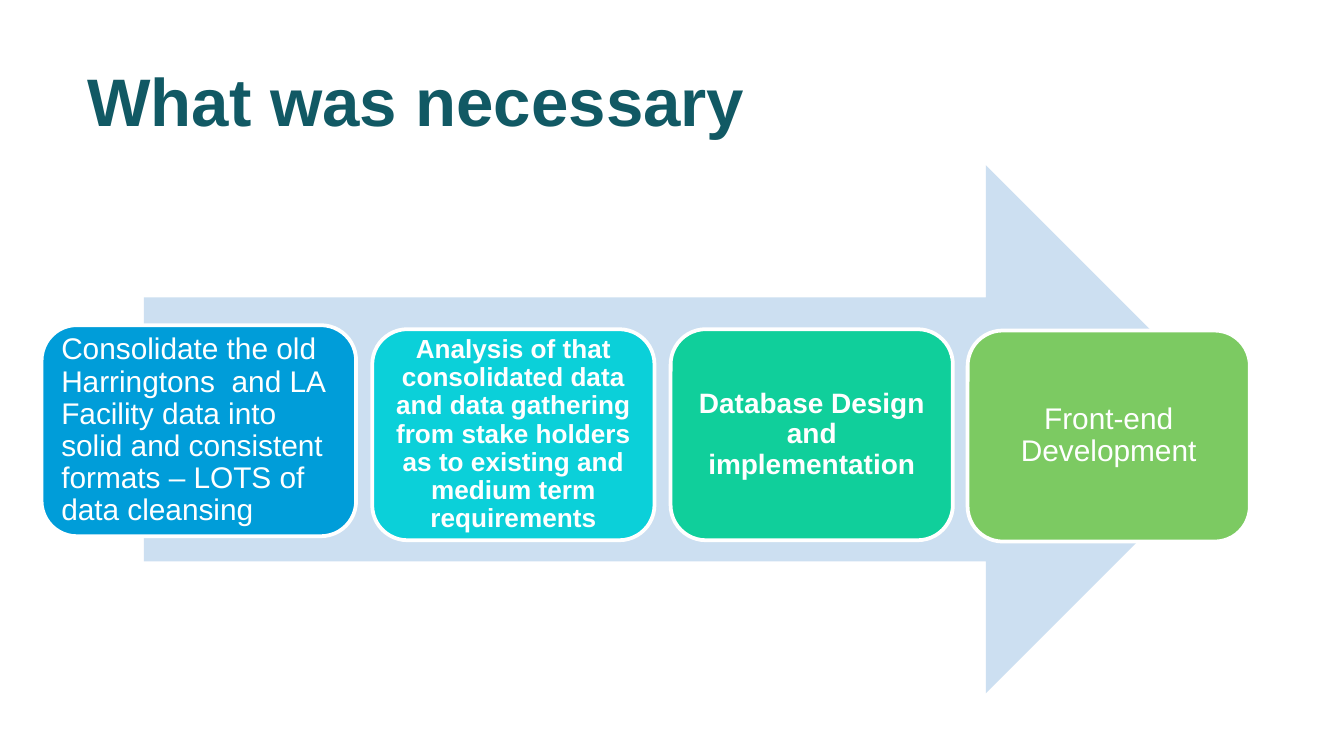
from pptx import Presentation
from pptx.dml.color import RGBColor
from pptx.enum.shapes import MSO_SHAPE
from pptx.enum.text import MSO_ANCHOR, MSO_AUTO_SIZE, PP_ALIGN
from pptx.util import Inches, Pt

FONT = "Arial"
COLORS = {
    "title": "115964",
    "arrow": "CCDFF1",
    "white": "FFFFFF",
    "blue": "009DD9",
    "cyan": "0BD0D9",
    "green": "10CF9B",
    "lime": "7CCA62",
}

STEP_HEIGHT = 1.57
# left, top, width, fill, inset, size, bold, alignment, text
STEPS = [
    (0.31, 2.42, 2.34, "blue", 0.07, 16, False, PP_ALIGN.LEFT,
     "Consolidate the old Harringtons  and LA Facility data into "
     "solid and consistent formats – LOTS of data cleansing"),
    (2.77, 2.45, 2.1, "cyan", 0.06, 14, True, PP_ALIGN.CENTER,
     "Analysis of that consolidated data and data gathering from "
     "stake holders as to existing and medium term requirements"),
    (4.99, 2.45, 2.1, "green", 0.06, 15, True, PP_ALIGN.CENTER,
     "Database Design and implementation"),
    (7.2, 2.46, 2.1, "lime", 0.07, 16, False, PP_ALIGN.CENTER,
     "Front-end Development"),
]


def rgb(name):
    return RGBColor.from_string(COLORS[name])


def write_text(tf, text, size, color, bold, align):
    tf.text = text
    tf.word_wrap = True
    tf.auto_size = MSO_AUTO_SIZE.NONE
    tf.vertical_anchor = MSO_ANCHOR.MIDDLE
    p = tf.paragraphs[0]
    p.alignment = align
    font = p.runs[0].font
    font.name, font.size, font.bold = FONT, Pt(size), bold
    font.color.rgb = rgb(color)
    return p


def add_title(s, text):
    title = s.shapes.title
    title.left, title.top = Inches(0.55), Inches(0.53)
    title.width, title.height = Inches(8.83), Inches(0.43)
    write_text(title.text_frame, text, 36, "title", True, PP_ALIGN.LEFT)


def add_filled(s, kind, left, top, width, height, fill):
    sp = s.shapes.add_shape(kind, Inches(left), Inches(top),
                            Inches(width), Inches(height))
    sp.shadow.inherit = False
    sp.fill.solid()
    sp.fill.fore_color.rgb = rgb(fill)
    sp.line.fill.background()
    return sp


def add_step(s, left, top, width, fill, inset, size, bold, align, text):
    sp = add_filled(s, MSO_SHAPE.ROUNDED_RECTANGLE,
                    left, top, width, STEP_HEIGHT, fill)
    sp.line.color.rgb = rgb("white")
    sp.line.width = Pt(2)
    tf = sp.text_frame
    tf.margin_left = tf.margin_right = Inches(inset)
    tf.margin_top = tf.margin_bottom = Inches(inset)
    p = write_text(tf, text, size, "white", bold, align)
    p.line_spacing = 0.9


def main():
    prs = Presentation()
    # 16:9 slide
    prs.slide_width = Inches(10)
    prs.slide_height = Inches(10 * 9 / 16)
    s = prs.slides.add_slide(prs.slide_layouts[5])
    add_title(s, "What was necessary")

    # Process arrow behind the steps
    add_filled(s, MSO_SHAPE.RIGHT_ARROW, 1.07, 1.23, 8.23, 3.93, "arrow")

    # Steps from left to right
    for step in STEPS:
        add_step(s, *step)

    prs.save("out.pptx")


if __name__ == "__main__":
    main()
